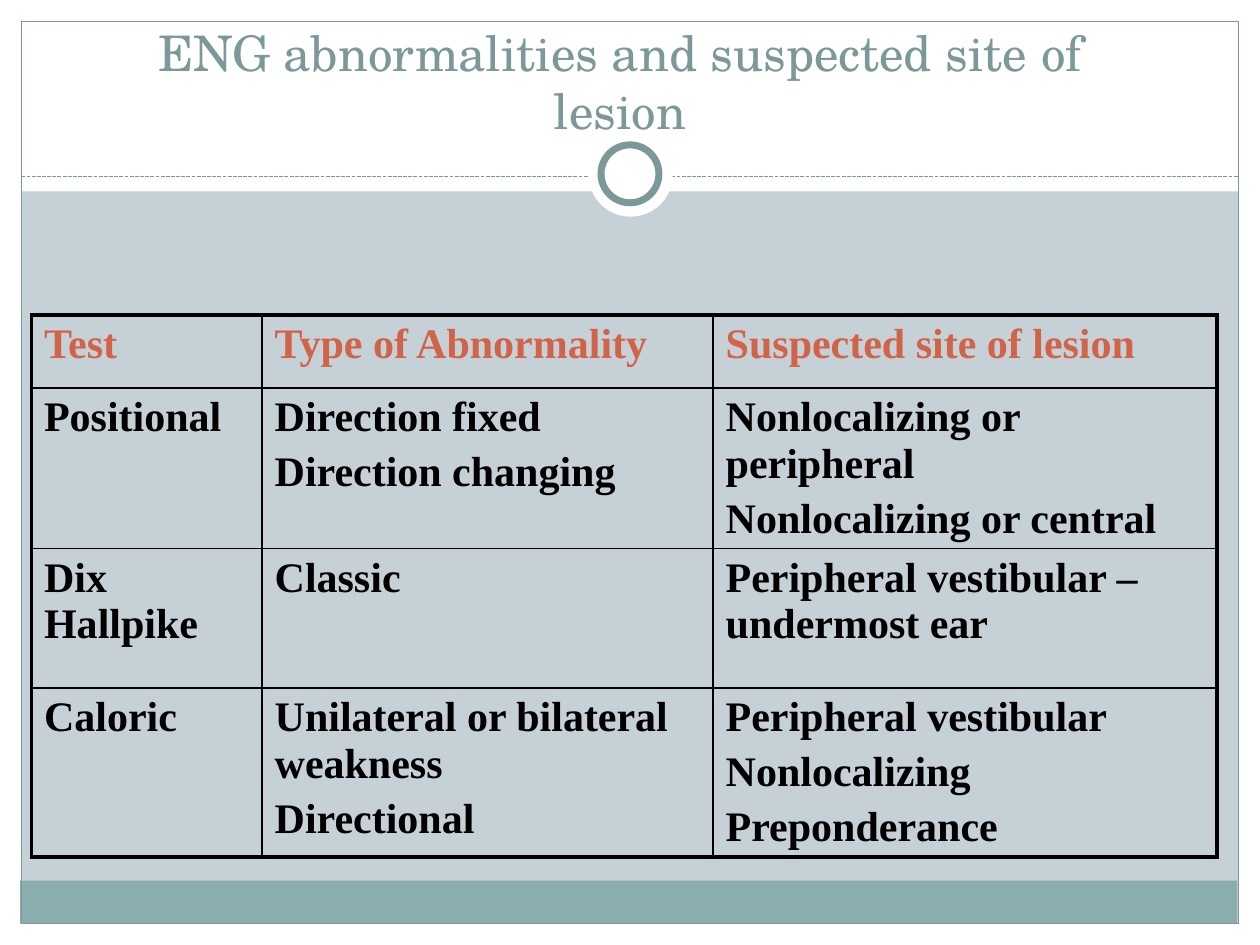
"""Build the slide on ENG abnormalities and suspected site of lesion."""
import pptx
import pptx.dml.color
import pptx.enum.dml
import pptx.enum.shapes
import pptx.enum.text
import pptx.oxml
import pptx.oxml.ns
import pptx.util

Inches = pptx.util.Inches
Pt = pptx.util.Pt
SHAPES = pptx.enum.shapes.MSO_SHAPE

WHITE, BLACK, TEAL, ORANGE = "FFFFFF", "000000", "7C999A", "D16349"
BACKGROUND, FOOTER = "C5D1D7", "8CADAE"

TITLE_FONT = {"name": "TeX Gyre Schola", "size": Pt(28), "bold": False}
CELL_FONT = {"name": "Times New Roman", "size": Pt(24), "bold": True}
CELL_PARA = {"space_before": Pt(4.8), "alignment": pptx.enum.text.PP_ALIGN.LEFT}

COLUMN_WIDTHS = [1.83, 3.58, 4]
ROW_HEIGHTS = [0.58, 1.11, 1.11, 1.11]
FINDINGS = [
    [["Test"], ["Type of Abnormality"], ["Suspected site of lesion"]],
    [["Positional"], ["Direction fixed", "Direction changing"],
     ["Nonlocalizing or peripheral", "Nonlocalizing or central"]],
    [["Dix Hallpike"], ["Classic"], ["Peripheral vestibular –undermost ear"]],
    [["Caloric"], ["Unilateral or bilateral weakness", "Directional"],
     ["Peripheral vestibular", "Nonlocalizing", "Preponderance"]],
]


def rgb(value):
    """Turn a hex string into a colour."""
    return pptx.dml.color.RGBColor.from_string(value)


def apply_format(target, values):
    """Set each named attribute on the target."""
    for name, value in values.items():
        setattr(target, name, value)


def add_span(para, text, font, color):
    """Add one formatted run to a paragraph."""
    span = para.add_run()
    span.text = text
    apply_format(span.font, font)
    span.font.color.rgb = rgb(color)


def add_panel(page, kind, place, fill=None, line=None, width=0.75):
    """Add a preset shape with an optional fill and outline."""
    panel = page.shapes.add_shape(kind, *map(Inches, place))
    panel.shadow.inherit = False
    if fill:
        panel.fill.solid()
        panel.fill.fore_color.rgb = rgb(fill)
    else:
        panel.fill.background()
    if line:
        panel.line.color.rgb = rgb(line)
        panel.line.width = Pt(width)
    else:
        panel.line.fill.background()


def add_divider(page, left, right, top):
    """Add the dashed line below the title."""
    divider = page.shapes.add_connector(
        pptx.enum.shapes.MSO_CONNECTOR.STRAIGHT,
        *map(Inches, (left, top, right, top)))
    divider.line.color.rgb = rgb(TEAL)
    apply_format(divider.line, {
        "width": Pt(0.75), "dash_style": pptx.enum.dml.MSO_LINE.SQUARE_DOT})
    properties = divider.element.spPr
    properties.append(properties.makeelement(pptx.oxml.ns.qn("a:effectLst"), {}))


def add_frame(page):
    """Add the white margins, footer band, outline and ring."""
    for place in [(0, 7.33, 10, 0.17), (0, 0, 10, 1.52),
                  (0, 0, 0.17, 7.5), (9.83, 0, 0.17, 7.5)]:
        add_panel(page, SHAPES.RECTANGLE, place, WHITE)
    add_panel(page, SHAPES.RECTANGLE, (0.16, 6.99, 9.66, 0.34), FOOTER)
    add_panel(page, SHAPES.RECTANGLE, (0.17, 0.17, 9.66, 7.16), line=TEAL)
    add_divider(page, 0.17, 9.83, 1.4)
    add_panel(page, SHAPES.OVAL, (4.67, 1.05, 0.67, 0.67), WHITE)
    add_panel(page, SHAPES.OVAL, (4.77, 1.15, 0.46, 0.46), WHITE, TEAL, 4)


def add_title(page, text):
    """Fill the title placeholder and bring it to the front."""
    box = page.shapes.title
    apply_format(box, {"left": Inches(0.67), "top": Inches(0.58),
                       "width": Inches(8.5), "height": Inches(0.58)})
    apply_format(box.text_frame, {
        "word_wrap": True,
        "auto_size": pptx.enum.text.MSO_AUTO_SIZE.NONE,
        "vertical_anchor": pptx.enum.text.MSO_ANCHOR.BOTTOM})
    para = box.text_frame.paragraphs[0]
    para.alignment = pptx.enum.text.PP_ALIGN.CENTER
    add_span(para, text, TITLE_FONT, TEAL)
    box.element.getparent().append(box.element)


def set_borders(cell, outer_sides):
    """Draw thick borders on the outer sides and thin ones elsewhere."""
    properties = cell._tc.get_or_add_tcPr()
    namespace = pptx.oxml.ns.nsdecls("a")
    for side in "LRTB":
        width = Pt(2.25 if side in outer_sides else 1)
        properties.append(pptx.oxml.parse_xml(
            f'<a:ln{side} {namespace} w="{width}"><a:solidFill>'
            f'<a:srgbClr val="{BLACK}"/></a:solidFill></a:ln{side}>'))


def fill_cell(cell, lines, color):
    """Write one paragraph per line in a cell."""
    frame = cell.text_frame
    for index, text in enumerate(lines):
        para = frame.add_paragraph() if index else frame.paragraphs[0]
        apply_format(para, CELL_PARA)
        add_span(para, text, CELL_FONT, color)


def add_findings(page):
    """Add the table of tests, abnormalities and lesion sites."""
    last_row, last_column = len(ROW_HEIGHTS) - 1, len(COLUMN_WIDTHS) - 1
    table = page.shapes.add_table(
        len(ROW_HEIGHTS), len(COLUMN_WIDTHS), Inches(0.25), Inches(2.5),
        Inches(sum(COLUMN_WIDTHS)), Inches(sum(ROW_HEIGHTS))).table
    apply_format(table, {"first_row": False, "horz_banding": False})
    for column, width in zip(table.columns, COLUMN_WIDTHS):
        column.width = Inches(width)
    for row, height in zip(table.rows, ROW_HEIGHTS):
        row.height = Inches(height)
    for r, row in enumerate(FINDINGS):
        for c, lines in enumerate(row):
            cell = table.cell(r, c)
            edges = {"L": c == 0, "R": c == last_column,
                     "T": r == 0, "B": r == last_row}
            set_borders(cell, [side for side, outer in edges.items() if outer])
            cell.fill.background()
            fill_cell(cell, lines, BLACK if r else ORANGE)


def main():
    """Build and save the deck."""
    deck = pptx.Presentation()
    apply_format(deck, {"slide_width": Inches(10), "slide_height": Inches(7.5)})
    page = deck.slides.add_slide(deck.slide_layouts[5])
    page.background.fill.solid()
    page.background.fill.fore_color.rgb = rgb(BACKGROUND)
    add_frame(page)
    add_title(page, "ENG abnormalities and suspected site of lesion")
    add_findings(page)
    deck.save("out.pptx")


if __name__ == "__main__":
    main()
